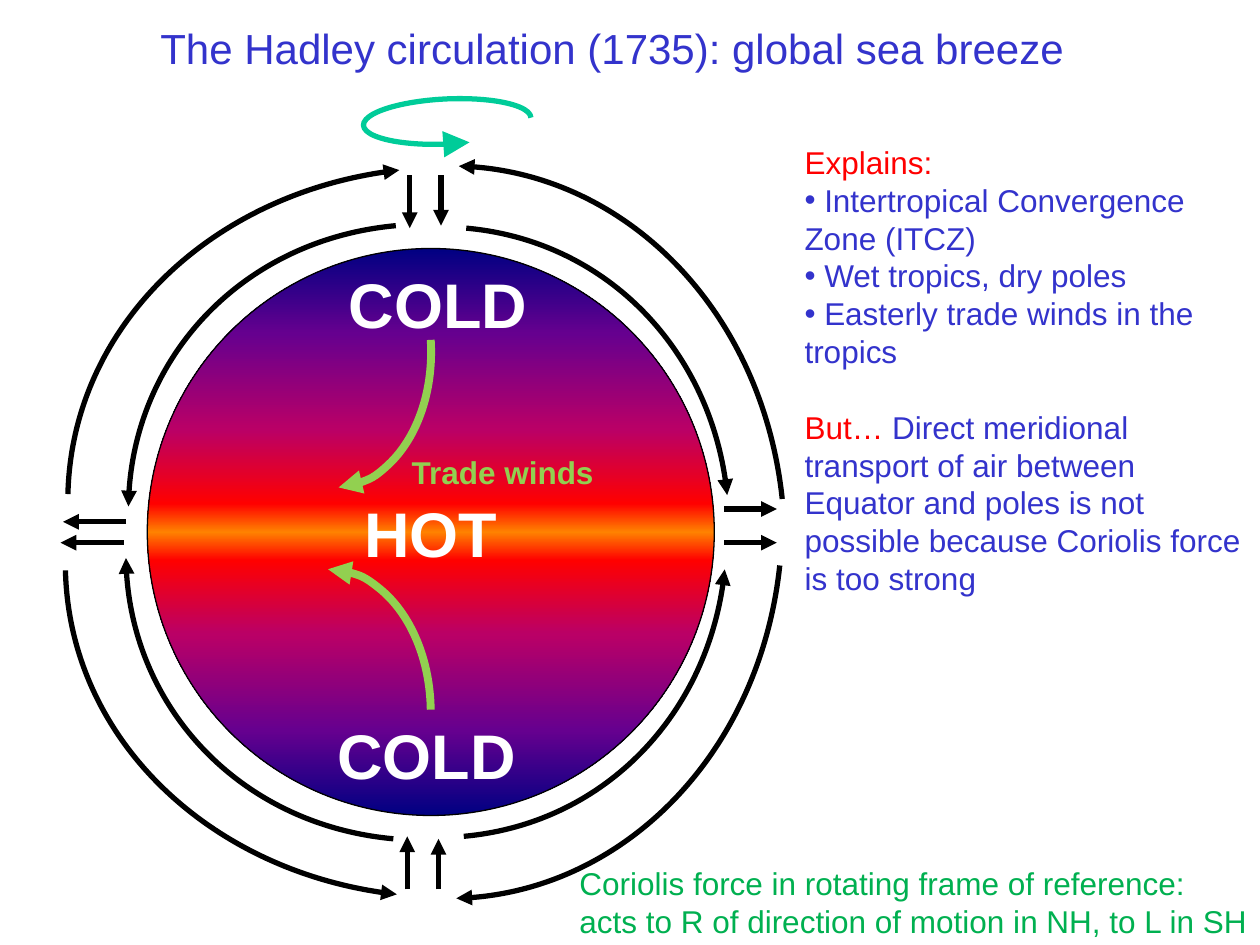
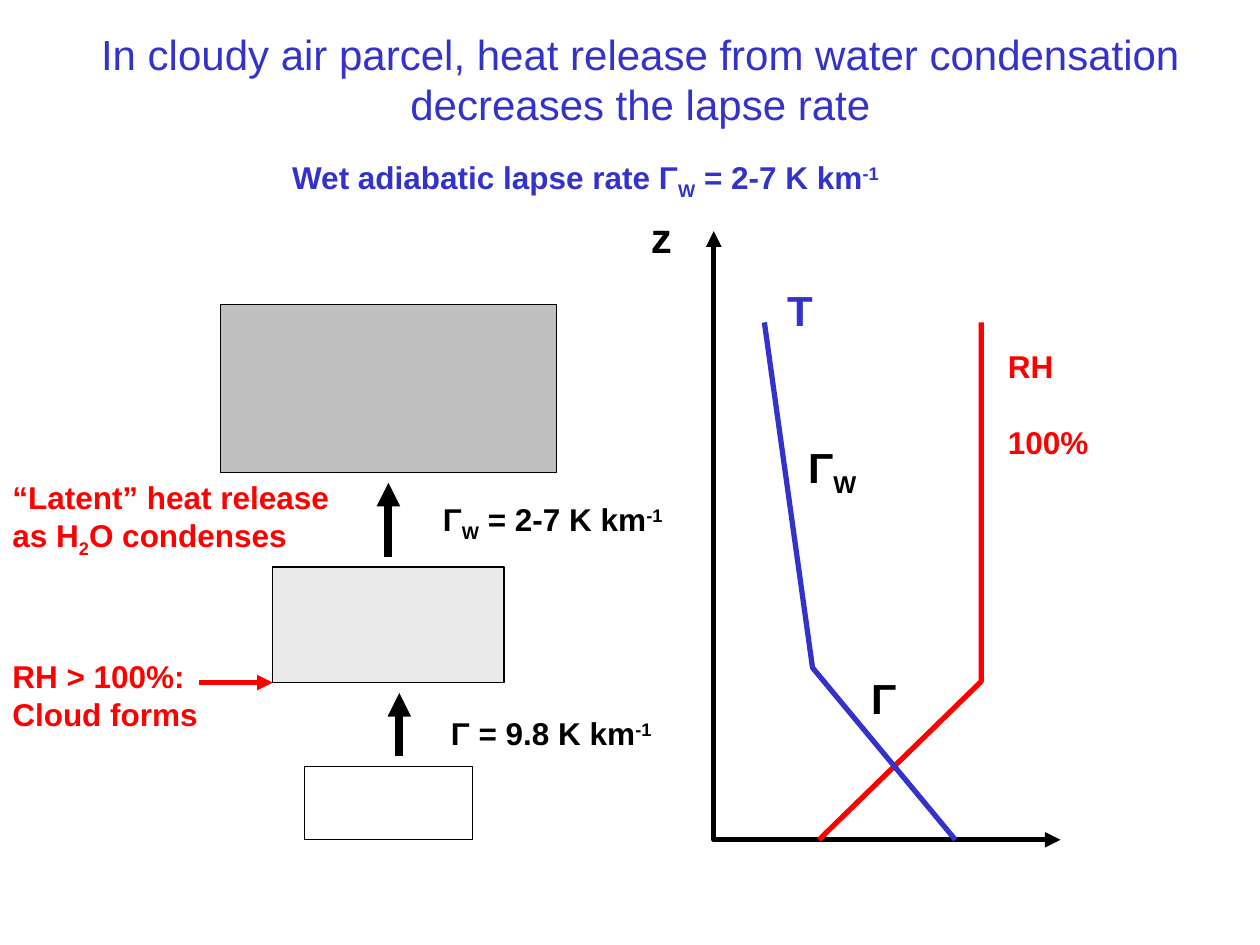
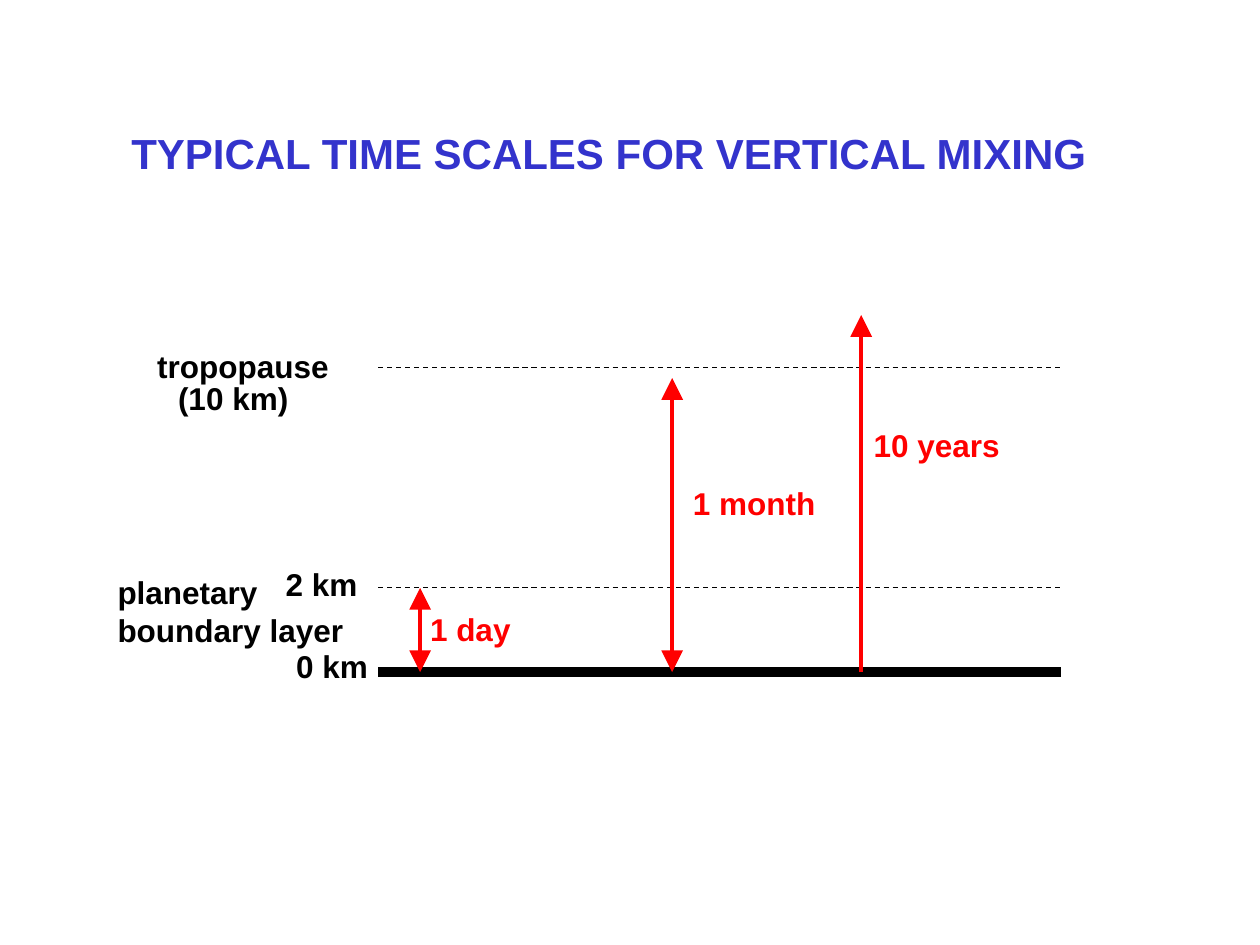
"""Build three slides on the Hadley circulation, wet lapse rate and vertical mixing."""
from dataclasses import dataclass
from typing import NamedTuple

from lxml import etree
from pptx import Presentation
from pptx.dml.color import RGBColor
from pptx.enum.dml import MSO_LINE
from pptx.enum.shapes import MSO_CONNECTOR, MSO_SHAPE
from pptx.enum.text import MSO_ANCHOR, MSO_AUTO_SIZE, PP_ALIGN
from pptx.oxml.ns import qn
from pptx.util import Cm, Pt

STRAIGHT = MSO_CONNECTOR.STRAIGHT
ARC, OVAL, RECT = MSO_SHAPE.ARC, MSO_SHAPE.OVAL, MSO_SHAPE.RECTANGLE
DASH = MSO_LINE.DASH
MIDDLE = MSO_ANCHOR.MIDDLE
CENTER = PP_ALIGN.CENTER
FIT_TEXT, NO_FIT = MSO_AUTO_SIZE.SHAPE_TO_FIT_TEXT, MSO_AUTO_SIZE.NONE

FONT = "Arial"
COLORS = {
    "black": "000000", "white": "FFFFFF", "blue": "3333CC", "red": "FF0000",
    "lime": "92D050", "green": "00B050", "teal": "00CC99",
    "cloud": "EAEAEA", "dense cloud": "C0C0C0",
}
GLOBE_STOPS = [(0, "000082"), (15, "66008F"), (32, "BA0066"), (45, "FF0000"), (50, "FF8200")]
EQUATOR_MIRROR = 21.46
SOUTH_SHIFT = -0.05
BLANK_LINE = 21.7

Point = tuple[float, float]


class Run(NamedTuple):
    """Text with an optional baseline shift and colour of its own."""
    text: str
    base: int = 0
    color: str = ""


class Para(NamedTuple):
    """Paragraph made of runs."""
    runs: list[Run]
    bullet: bool = False
    before: float = 0


@dataclass
class Label:
    """Text box placed in centimetres."""
    x: float
    y: float
    w: float
    h: float
    paras: list[Para]
    color: str = "black"
    size: int = 18
    bold: bool = True
    wrap: bool = False


@dataclass
class Stroke:
    """Line style with optional arrowheads."""
    color: str = "black"
    width: float = 3
    head: bool = False
    tail: bool = False
    dash: bool = False
    tip: str = "med"


@dataclass
class Arc:
    """Preset arc used as a curved arrow."""
    x: float
    y: float
    w: float
    h: float
    rotation: float
    start: float
    end: float
    stroke: Stroke
    flip: str = ""


ARROW = Stroke(tail=True)
THIN = Stroke(width=0.75)
LEVEL = Stroke(width=0.75, dash=True)
LIFT = Stroke(width=4.5, tail=True)
TRADE_WIND = Stroke("lime", 4.5, tail=True)
SPIN = Stroke("teal", tail=True, tip="lg")
MIXING = Stroke("red", 2.5, head=True, tail=True, tip="lg")
ESCAPE = Stroke("red", 2.5, tail=True, tip="lg")
WET_RATE = [Run("W", -25), Run(" = 2-7 K km"), Run("-1", 30)]

WIND_CURVES: list[list[Point]] = [
    [(7.98, 4.55), (4.93, 4.83), (2.62, 7.29), (2.59, 10.21)],
    [(1.37, 9.96), (1.45, 6.63), (4.32, 3.84), (8.05, 3.43)],
    [(9.4, 4.6), (12.17, 4.85), (14.38, 7.11), (14.66, 9.98)],
    [(15.77, 10.06), (15.37, 6.32), (12.55, 3.43), (9.25, 3.35)],
]
WIND_LINES: list[list[Point]] = [
    [(2.54, 10.52), (1.27, 10.52)],
    [(8.26, 3.53), (8.26, 4.6)],
    [(8.89, 3.53), (8.89, 4.55)],
]


def rgb(name: str) -> RGBColor:
    """Look up a named colour."""
    return RGBColor.from_string(COLORS[name])


def plain(*lines: str) -> list[Para]:
    """Make one paragraph of one run from each line."""
    return [Para([Run(line)]) for line in lines]


def style_line(sp, stroke: Stroke) -> None:
    """Apply a stroke to a shape or connector."""
    sp.line.color.rgb = rgb(stroke.color)
    sp.line.width = Pt(stroke.width)
    if stroke.dash:
        sp.line.dash_style = DASH
    ln = sp.line._get_or_add_ln()
    for wanted, tag in ((stroke.head, "a:headEnd"), (stroke.tail, "a:tailEnd")):
        if wanted:
            etree.SubElement(ln, qn(tag), type="triangle", w=stroke.tip, len=stroke.tip)


def add_shape(slide, kind, x: float, y: float, w: float, h: float,
              stroke: Stroke, fill: str = ""):
    """Draw a preset shape without a shadow."""
    sp = slide.shapes.add_shape(kind, Cm(x), Cm(y), Cm(w), Cm(h))
    sp.shadow.inherit = False
    if fill:
        sp.fill.solid()
        sp.fill.fore_color.rgb = rgb(fill)
    else:
        sp.fill.background()
    style_line(sp, stroke)
    return sp


def add_line(slide, start: Point, end: Point, stroke: Stroke) -> None:
    """Draw a straight connector."""
    sp = slide.shapes.add_connector(STRAIGHT, Cm(start[0]), Cm(start[1]), Cm(end[0]), Cm(end[1]))
    etree.SubElement(sp._element.spPr, qn("a:effectLst"))
    style_line(sp, stroke)


def add_polyline(slide, points: list[Point], stroke: Stroke):
    """Draw an open outline through the points."""
    first, *rest = [(Cm(x), Cm(y)) for x, y in points]
    builder = slide.shapes.build_freeform(*first)
    builder.add_line_segments(rest, close=False)
    sp = builder.convert_to_shape()
    sp.shadow.inherit = False
    sp.fill.background()
    style_line(sp, stroke)
    return sp


def add_curve(slide, controls: list[Point], stroke: Stroke) -> None:
    """Draw one cubic curve from its four control points."""
    sp = add_polyline(slide, controls, stroke)
    segments = list(sp._element.iter(qn("a:lnTo")))
    outline = segments[0].getparent()
    cubic = etree.SubElement(outline, qn("a:cubicBezTo"))
    for segment in segments:
        cubic.append(segment[0])
        outline.remove(segment)


def add_arc(slide, arc: Arc) -> None:
    """Draw a curved arrow."""
    sp = add_shape(slide, ARC, arc.x, arc.y, arc.w, arc.h, arc.stroke)
    sp.adjustments[0] = arc.start
    sp.adjustments[1] = arc.end
    sp.rotation = arc.rotation
    if arc.flip:
        sp._element.spPr.get_or_add_xfrm().set(arc.flip, "1")


def write(tf, paras: list[Para], color: str, size: int, bold: bool) -> None:
    """Fill a text frame run by run."""
    for i, para in enumerate(paras):
        p = tf.add_paragraph() if i else tf.paragraphs[0]
        if para.before:
            p.space_before = Pt(para.before)
        if para.bullet:
            pPr = p._p.get_or_add_pPr()
            pPr.set("marL", "0")
            pPr.set("indent", "0")
            etree.SubElement(pPr, qn("a:buFont"), typeface=FONT)
            etree.SubElement(pPr, qn("a:buChar"), char="•")
        for run in para.runs:
            r = p.add_run()
            r.text = run.text
            r.font.name = FONT
            r.font.size = Pt(size)
            r.font.bold = bold
            r.font.color.rgb = rgb(run.color or color)
            if run.base:
                r._r.get_or_add_rPr().set("baseline", str(run.base * 1000))


def add_label(slide, label: Label):
    """Add a text box and return its text frame."""
    tf = slide.shapes.add_textbox(Cm(label.x), Cm(label.y), Cm(label.w), Cm(label.h)).text_frame
    tf.word_wrap = label.wrap
    tf.auto_size = FIT_TEXT
    write(tf, label.paras, label.color, label.size, label.bold)
    return tf


def add_title(slide, x: float, y: float, w: float, h: float, text: str, bold: bool = False) -> None:
    """Add a centred title."""
    tf = add_label(slide, Label(x, y, w, h, plain(text), "blue", 24, bold, wrap=True))
    tf.auto_size = NO_FIT
    tf.vertical_anchor = MIDDLE
    tf.paragraphs[0].alignment = CENTER


def add_globe(slide) -> None:
    """Draw the globe, cold at the poles and hot at the equator."""
    sp = add_shape(slide, OVAL, 2.97, 5.01, 11.43, 11.43, THIN)
    sp.fill.gradient()
    sp.fill.gradient_angle = 90
    stops = sp._element.spPr.find(qn("a:gradFill")).find(qn("a:gsLst"))
    for old in list(stops):
        stops.remove(old)
    south = [(100 - pos, color) for pos, color in reversed(GLOBE_STOPS[:-1])]
    for pos, color in GLOBE_STOPS + south:
        gs = etree.SubElement(stops, qn("a:gs"), pos=str(pos * 1000))
        etree.SubElement(gs, qn("a:srgbClr"), val=color)
    tf = sp.text_frame
    tf.word_wrap = False
    tf.vertical_anchor = MIDDLE
    write(tf, plain("HOT"), "white", 36, True)
    tf.paragraphs[0].alignment = CENTER


def to_south(points: list[Point]) -> list[Point]:
    """Mirror points across the equator."""
    return [(x + SOUTH_SHIFT, EQUATOR_MIRROR - y) for x, y in points]


def hadley_slide(slide) -> None:
    """Draw the Hadley circulation."""
    add_title(slide, 0.81, 0, 23.06, 1.93, "The Hadley circulation (1735): global sea breeze")
    add_globe(slide)
    for controls in WIND_CURVES:
        for points in (controls, to_south(controls)):
            add_curve(slide, points, ARROW)
    for ends in WIND_LINES:
        for start, end in (ends, to_south(ends)):
            add_line(slide, start, end, ARROW)
    for y in (10.26, 10.94):
        add_line(slide, (14.6, y), (15.66, y), ARROW)
    for arc in (
        Arc(3.73, 4.88, 5.77, 4.14, 85.8, 162.9, 0, TRADE_WIND),
        Arc(3.73, 12.29, 5.77, 4.14, 90, 162.9, 0, TRADE_WIND, "flipH"),
        Arc(8.56, 0.76, 0.91, 3.38, 267.4, 162, 134.63, SPIN, "flipV"),
    ):
        add_arc(slide, arc)
    explains = [
        Para([Run("Explains:", color="red")]),
        Para([Run(" Intertropical Convergence Zone (ITCZ)")], bullet=True),
        Para([Run(" Wet tropics, dry poles")], bullet=True),
        Para([Run(" Easterly trade winds in the tropics")], bullet=True),
        Para([Run("But…", color="red"),
              Run(" Direct meridional transport of air between Equator and poles is not "
                  "possible because Coriolis force is too strong")], before=BLANK_LINE),
    ]
    coriolis = plain("Coriolis force in rotating frame of reference:",
                     "acts to R of direction of motion in NH, to L in SH")
    for label in (
        Label(6.78, 5.23, 4.11, 1.78, plain("COLD"), "white", 36),
        Label(6.55, 14.32, 4.11, 1.78, plain("COLD"), "white", 36),
        Label(8.05, 9.01, 4.22, 1.02, plain("Trade winds"), "lime"),
        Label(15.97, 2.76, 9.32, 9.5, explains, "blue", bold=False, wrap=True),
        Label(11.43, 17.3, 13.97, 1.75, coriolis, "green", bold=False),
    ):
        add_label(slide, label)


def lapse_rate_slide(slide) -> None:
    """Draw a rising cloudy air parcel and its profiles."""
    add_title(slide, 1.48, 0, 22.86, 3.18,
              "In cloudy air parcel, heat release from water condensation decreases the lapse rate")
    parcel_center = 7.83
    for y, w, h, fill in ((15.45, 3.38, 1.48, ""), (11.43, 4.66, 2.33, "cloud"),
                          (6.14, 6.78, 3.38, "dense cloud")):
        add_shape(slide, RECT, parcel_center - w / 2, y, w, h, THIN, fill)
    add_line(slide, (8.05, 15.24), (8.05, 13.97), LIFT)
    add_line(slide, (parcel_center, 11.22), (parcel_center, 9.73), LIFT)
    add_line(slide, (4.02, 13.76), (5.5, 13.76), Stroke("red", tail=True))
    ground, top = 16.93, 6.5
    add_polyline(slide, [(14.39, 4.66), (14.39, ground), (21.38, ground)],
                 Stroke(head=True, tail=True))
    add_polyline(slide, [(16.51, ground), (19.78, 13.74), (19.78, top)], Stroke("red"))
    add_polyline(slide, [(19.26, ground), (16.38, 13.46), (15.41, top)], Stroke("blue"))
    latent = [Para([Run("“Latent” heat release")]),
              Para([Run("as H"), Run("2", -25), Run("O condenses")])]
    humidity = [Para([Run("RH")]), Para([Run("100%")], before=BLANK_LINE)]
    for label in (
        Label(0, 13.13, 4.24, 1.78, plain("RH > 100%:", "Cloud forms"), "red"),
        Label(0, 9.52, 6.91, 1.78, latent, "red"),
        Label(8.84, 14.27, 4.55, 1.02, [Para([Run("Γ = 9.8 K km"), Run("-1", 30)])]),
        Label(8.68, 9.96, 4.98, 1.02, [Para([Run("Γ"), *WET_RATE])]),
        Label(20.07, 6.88, 2.13, 2.54, humidity, "red"),
        Label(15.62, 5.61, 1.02, 1.27, plain("T"), "blue", 24),
        Label(12.87, 4.14, 0.94, 1.27, plain("z"), size=24),
        Label(17.31, 13.44, 1.02, 1.27, plain("Γ"), size=24),
        Label(16.04, 8.77, 1.55, 1.27, [Para([Run("Γ"), Run("W", -25)])], size=24),
        Label(5.64, 3.07, 12.45, 1.02,
              [Para([Run("Wet adiabatic lapse rate Γ"), *WET_RATE])], "blue"),
    ):
        add_label(slide, label)


def mixing_slide(slide) -> None:
    """Draw the time scales of vertical mixing."""
    add_title(slide, 1.06, 1.49, 22.43, 3.18, "TYPICAL TIME SCALES FOR VERTICAL MIXING", True)
    ground, boundary, tropopause = 13.55, 11.85, 7.41
    for y, stroke in ((ground, Stroke(width=6)), (boundary, LEVEL), (tropopause, LEVEL)):
        add_line(slide, (7.62, y), (21.38, y), stroke)
    for x, y, stroke in ((8.47, boundary, MIXING), (13.55, 7.62, MIXING), (17.36, 6.35, ESCAPE)):
        add_line(slide, (x, ground), (x, y), stroke)
    for label in (
        Label(5.72, 12.91, 1.96, 1.02, plain("0 km")),
        Label(5.51, 11.26, 1.96, 1.02, plain("2 km")),
        Label(8.42, 12.17, 2.13, 1.02, plain("1 day"), "red"),
        Label(2.12, 11.43, 5.11, 1.8, plain("planetary", "boundary layer")),
        Label(2.92, 6.88, 3.96, 1.02, plain("tropopause")),
        Label(3.34, 7.52, 2.74, 1.02, plain("(10 km)")),
        Label(13.72, 9.63, 2.97, 1.02, plain("1 month"), "red"),
        Label(17.36, 8.46, 3.05, 1.02, plain("10 years"), "red"),
    ):
        add_label(slide, label)


def main() -> None:
    """Build and save the presentation."""
    prs = Presentation()
    prs.slide_width, prs.slide_height = Cm(25.4), Cm(19.05)
    for draw in (hadley_slide, lapse_rate_slide, mixing_slide):
        draw(prs.slides.add_slide(prs.slide_layouts[6]))
    prs.save("out.pptx")


if __name__ == "__main__":
    main()
